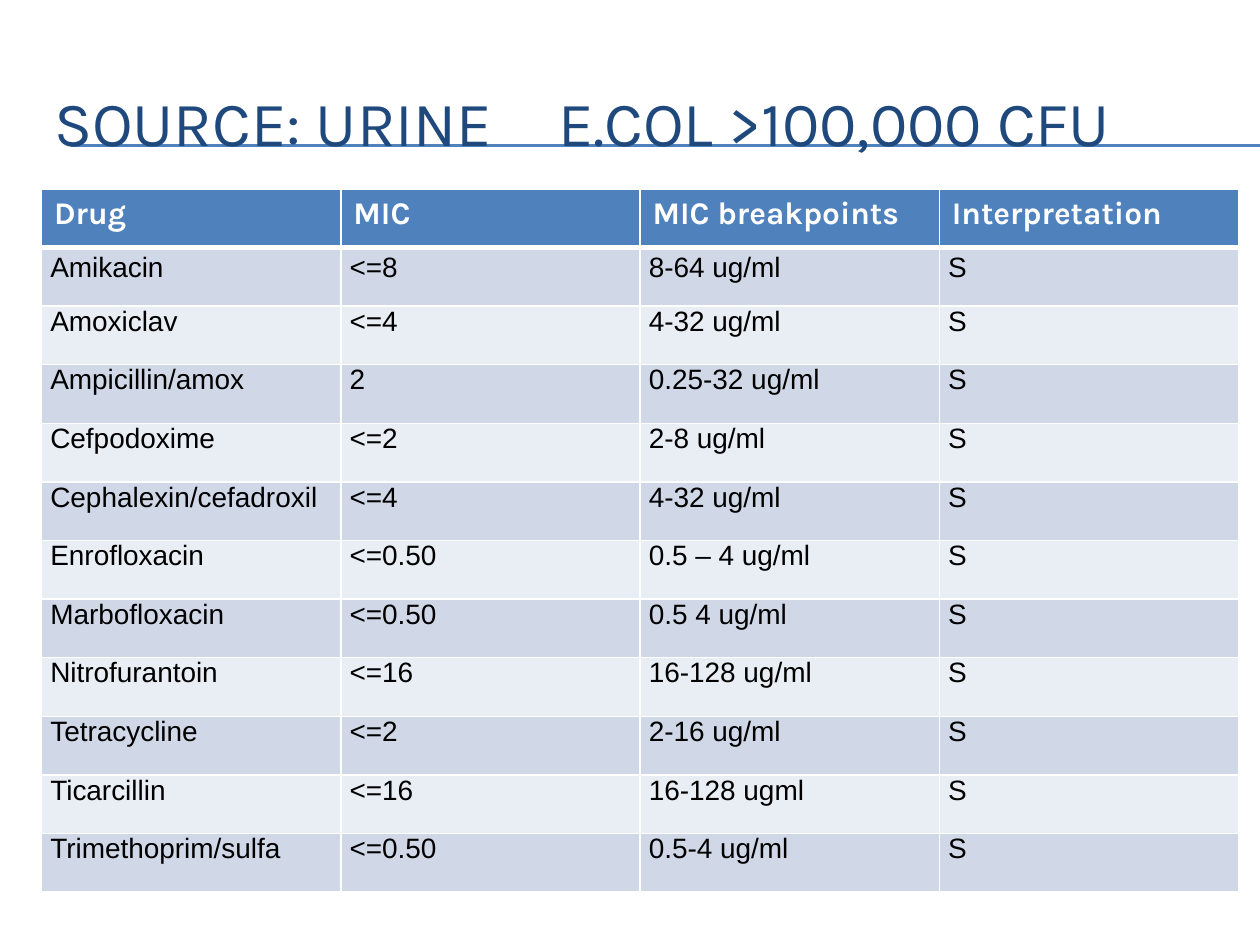
from pptx import Presentation
from pptx.dml.color import RGBColor
from pptx.enum.shapes import MSO_CONNECTOR
from pptx.enum.text import MSO_ANCHOR, MSO_AUTO_SIZE, PP_ALIGN
from pptx.oxml.ns import qn
from pptx.util import Inches, Pt
from lxml.etree import SubElement

NAVY = RGBColor(0x1F, 0x49, 0x7D)
BLUE = RGBColor(0x4F, 0x81, 0xBD)
BAND_DARK = RGBColor(0xD0, 0xD8, 0xE8)
BAND_LIGHT = RGBColor(0xE9, 0xED, 0xF4)
WHITE = RGBColor(0xFF, 0xFF, 0xFF)
BLACK = RGBColor(0, 0, 0)

HEADERS = ["Drug", "MIC", "MIC breakpoints", "Interpretation"]
RESULTS = [
    ["Amikacin", "<=8", "8-64 ug/ml", "S"],
    ["Amoxiclav", "<=4", "4-32 ug/ml", "S"],
    ["Ampicillin/amox", "2", "0.25-32 ug/ml", "S"],
    ["Cefpodoxime", "<=2", "2-8 ug/ml", "S"],
    ["Cephalexin/cefadroxil", "<=4", "4-32 ug/ml", "S"],
    ["Enrofloxacin", "<=0.50", "0.5 – 4 ug/ml", "S"],
    ["Marbofloxacin", "<=0.50", "0.5 4 ug/ml", "S"],
    ["Nitrofurantoin", "<=16", "16-128 ug/ml", "S"],
    ["Tetracycline", "<=2", "2-16 ug/ml", "S"],
    ["Ticarcillin", "<=16", "16-128 ugml", "S"],
    ["Trimethoprim/sulfa", "<=0.50", "0.5-4 ug/ml", "S"],
]


class SlideBuilder:
    heading_font = "Karla"
    body_font = "Arial"

    def __init__(self, prs):
        self.s = prs.slides.add_slide(prs.slide_layouts[5])

    def format(self, p, font, size, color, bold=False):
        p.font.name = font
        p.font.size = Pt(size)
        p.font.bold = bold
        p.font.color.rgb = color

    def title(self, text, left, top, width, height):
        sp = self.s.shapes.title
        sp.left, sp.top = Inches(left), Inches(top)
        sp.width, sp.height = Inches(width), Inches(height)
        tf = sp.text_frame
        tf.text = text
        tf.word_wrap = True
        tf.auto_size = MSO_AUTO_SIZE.NONE
        tf.vertical_anchor = MSO_ANCHOR.MIDDLE
        p = tf.paragraphs[0]
        p.alignment = PP_ALIGN.LEFT
        self.format(p, self.heading_font, 36, NAVY)

    def rule(self, left, right, y):
        line = self.s.shapes.add_connector(
            MSO_CONNECTOR.STRAIGHT, Inches(left), Inches(y), Inches(right), Inches(y))
        line.line.color.rgb = BLUE
        line.line.width = Pt(0.75)
        SubElement(line._element.spPr, qn("a:effectLst"))
        # Keep rules behind the title
        self.s.shapes._spTree.insert(2, line._element)

    def borders(self, cell, top=1, bottom=1):
        tc_pr = cell._tc.get_or_add_tcPr()
        for side, width in (("L", 1), ("R", 1), ("T", top), ("B", bottom)):
            ln = SubElement(tc_pr, qn(f"a:ln{side}"), w=str(Pt(width)))
            fill = SubElement(ln, qn("a:solidFill"))
            SubElement(fill, qn("a:srgbClr"), val=str(WHITE))

    def cell(self, cell, text, row):
        cell.text = text
        p = cell.text_frame.paragraphs[0]
        self.borders(cell, top=3 if row == 1 else 1, bottom=3 if row == 0 else 1)
        cell.fill.solid()
        if row == 0:
            cell.fill.fore_color.rgb = BLUE
            self.format(p, self.heading_font, 18, WHITE, bold=True)
            return
        cell.fill.fore_color.rgb = BAND_DARK if row % 2 else BAND_LIGHT
        cell.margin_left = cell.margin_right = Inches(0.07)
        cell.margin_top = cell.margin_bottom = 0
        self.format(p, self.body_font, 16, BLACK)
        if row == 1:
            p.line_spacing = 1.15

    def table(self, rows, left, top, width, height):
        table = self.s.shapes.add_table(
            len(rows), len(rows[0]), Inches(left), Inches(top),
            Inches(width), Inches(height)).table
        for r, values in enumerate(rows):
            for c, text in enumerate(values):
                self.cell(table.cell(r, c), text, r)


def main():
    prs = Presentation()
    prs.slide_width, prs.slide_height = Inches(10), Inches(7.5)
    slide = SlideBuilder(prs)

    # Heading with its double rule
    slide.title("SOURCE: URINE \tE.COL >100,000 CFU", 0.33, 0.5, 9.5, 0.92)
    for y in (1.15, 1.16):
        slide.rule(0.56, 10, y)

    # Susceptibility results
    slide.table([HEADERS] + RESULTS, 0.33, 1.5, 9.5, 5.58)

    prs.save("out.pptx")


if __name__ == "__main__":
    main()
